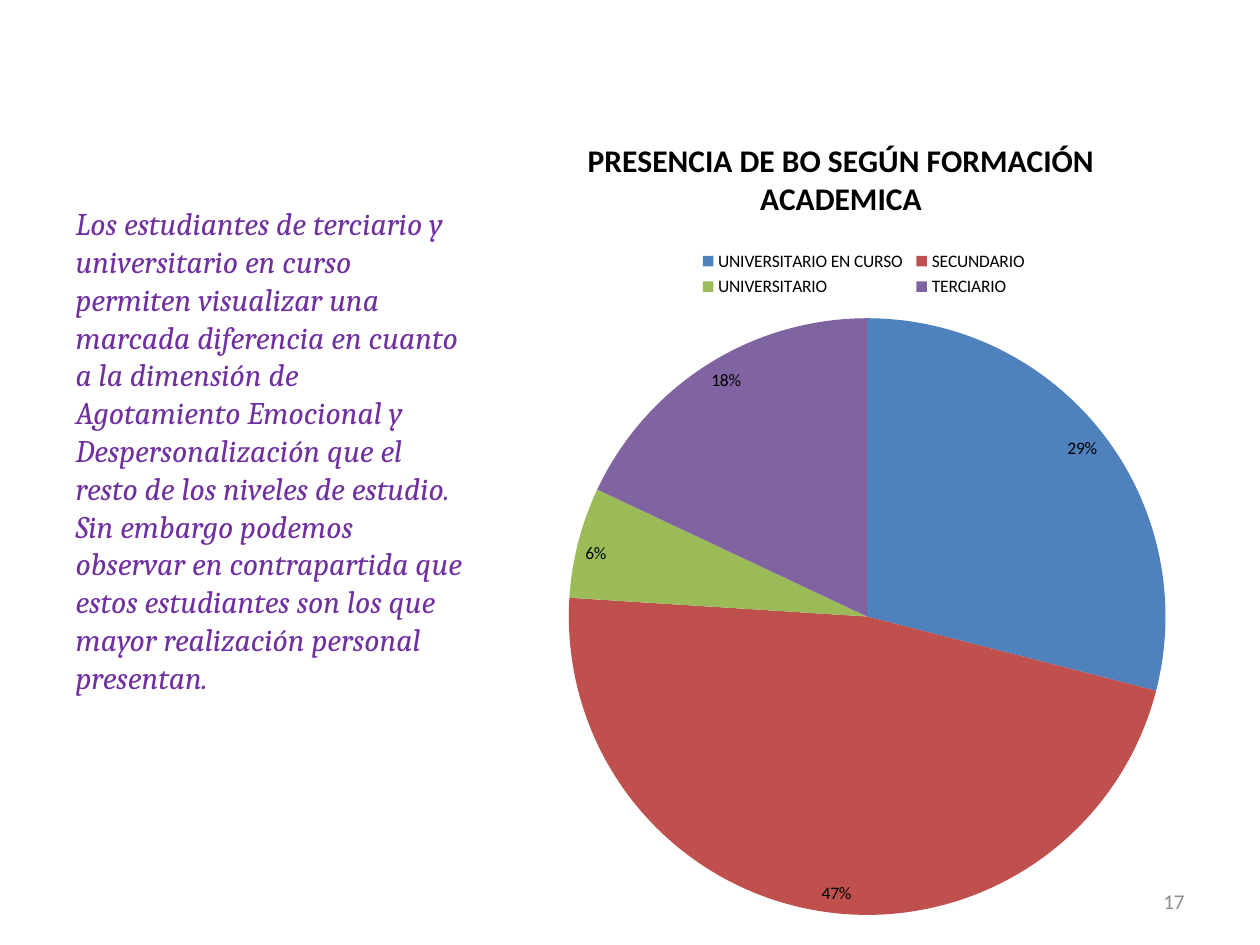
"""Build a slide with an explanatory text beside a pie chart of burnout by education level."""

import dataclasses

import lxml.etree
import pptx
import pptx.chart.chart
import pptx.chart.data
import pptx.dml.color
import pptx.enum.chart
import pptx.enum.text
import pptx.oxml.ns
import pptx.slide
import pptx.text.text
import pptx.util

COLORS: dict[str, str] = {
    "black": "000000",
    "purple": "7030A0",
    "gray": "8C8C8C",
    "blue": "4F81BD",
    "red": "C0504D",
    "green": "9BBB59",
    "violet": "8064A2",
}

BODY = (
    "Los estudiantes de terciario y universitario en curso permiten visualizar una "
    "marcada diferencia en cuanto a la dimensión de Agotamiento Emocional y "
    "Despersonalización que el resto de los niveles de estudio. Sin embargo podemos "
    "observar en contrapartida que estos estudiantes son los que mayor realización "
    "personal presentan."
)


@dataclasses.dataclass(frozen=True)
class Area:
    left: float
    top: float
    width: float | None = None
    height: float | None = None

    def inches(self) -> list[pptx.util.Length]:
        return [pptx.util.Inches(value) for value in dataclasses.astuple(self)]


@dataclasses.dataclass(frozen=True)
class Slice:
    name: str
    percent: int
    color: str


SLICES = [
    Slice("UNIVERSITARIO EN CURSO", 29, "blue"),
    Slice("SECUNDARIO", 47, "red"),
    Slice("UNIVERSITARIO", 6, "green"),
    Slice("TERCIARIO", 18, "violet"),
]


def style_font(font: pptx.text.text.Font, name: str, size: int, color: str) -> None:
    font.name = name
    font.size = pptx.util.Pt(size)
    font.color.rgb = pptx.dml.color.RGBColor.from_string(COLORS[color])


def add_span(para, text: str, name: str, size: int, color: str) -> pptx.text.text.Font:
    span = para.add_run()
    span.text = text
    style_font(span.font, name, size, color)
    return span.font


def place_part(parent: lxml.etree._Element, index: int, area: Area, inner: bool = False) -> None:
    """Give a chart part a manual layout in fractions of the chart area."""
    qn = pptx.oxml.ns.qn
    for old in parent.findall(qn("c:layout")):
        parent.remove(old)
    layout = lxml.etree.Element(qn("c:layout"))
    manual = lxml.etree.SubElement(layout, qn("c:manualLayout"))
    settings = {"layoutTarget": "inner"} if inner else {}
    settings |= {"xMode": "edge", "yMode": "edge", "x": area.left, "y": area.top}
    if area.width is not None:
        settings |= {"w": area.width, "h": area.height}
    for tag, value in settings.items():
        lxml.etree.SubElement(manual, qn(f"c:{tag}")).set("val", str(value))
    parent.insert(index, layout)


def add_pie(slide: pptx.slide.Slide, area: Area) -> pptx.chart.chart.Chart:
    data = pptx.chart.data.CategoryChartData()
    data.categories = [part.name for part in SLICES]
    data.add_series("Series 1", [part.percent for part in SLICES])
    chart = slide.shapes.add_chart(
        pptx.enum.chart.XL_CHART_TYPE.PIE, *area.inches(), data
    ).chart
    style_font(chart.font, "Calibri", 10, "black")

    plot = chart.plots[0]
    plot.vary_by_categories = True
    for index, part in enumerate(SLICES):
        fill = plot.series[0].points[index].format.fill
        fill.solid()
        fill.fore_color.rgb = pptx.dml.color.RGBColor.from_string(COLORS[part.color])
    labels = plot.series[0].data_labels
    labels.show_percentage = True
    labels.show_value = False
    labels.number_format = "0%"
    labels.number_format_is_linked = False
    labels.position = pptx.enum.chart.XL_LABEL_POSITION.INSIDE_END
    style_font(labels.font, "Calibri", 10, "black")

    chart.has_title = True
    para = chart.chart_title.text_frame.paragraphs[0]
    heading = "PRESENCIA DE BO SEGÚN FORMACIÓN ACADEMICA"
    add_span(para, heading, "Calibri", 18, "black").bold = True

    chart.has_legend = True
    chart.legend.position = pptx.enum.chart.XL_LEGEND_POSITION.TOP
    chart.legend.include_in_layout = False
    style_font(chart.legend.font, "Calibri", 10, "black")

    root = chart._chartSpace
    place_part(root.xpath("c:chart/c:title")[0], 1, Area(0.1, 0.01))
    place_part(root.xpath("c:chart/c:legend")[0], 1, Area(0.26, 0.15, 0.48, 0.07))
    place_part(root.xpath("c:chart/c:plotArea")[0], 0, Area(0.08, 0.24, 0.85, 0.74), True)
    return chart


def fill_body(slide: pptx.slide.Slide, area: Area) -> None:
    for holder in list(slide.placeholders):
        if holder.placeholder_format.idx != 2:
            holder.element.getparent().remove(holder.element)
    box = slide.placeholders[2]
    box.left, box.top, box.width, box.height = area.inches()
    box.text_frame.auto_size = pptx.enum.text.MSO_AUTO_SIZE.NONE
    add_span(box.text_frame.paragraphs[0], BODY, "Cambria", 18, "purple").italic = True


def add_page_number(slide: pptx.slide.Slide, area: Area, number: str) -> None:
    frame = slide.shapes.add_textbox(*area.inches()).text_frame
    frame.word_wrap = True
    frame.vertical_anchor = pptx.enum.text.MSO_ANCHOR.MIDDLE
    para = frame.paragraphs[0]
    para.alignment = pptx.enum.text.PP_ALIGN.RIGHT
    add_span(para, number, "Calibri", 12, "gray")


def main() -> None:
    deck = pptx.Presentation()
    deck.slide_width = pptx.util.Inches(10)
    deck.slide_height = pptx.util.Inches(7.5)
    page = deck.slides.add_slide(deck.slide_layouts.get_by_name("Content with Caption"))
    fill_body(page, Area(0.5, 1.57, 3.29, 5.13))
    add_page_number(page, Area(7.17, 6.95, 2.33, 0.4), "17")
    add_pie(page, Area(4.06, 0.99, 5.59, 6.4))
    deck.save("out.pptx")


if __name__ == "__main__":
    main()
